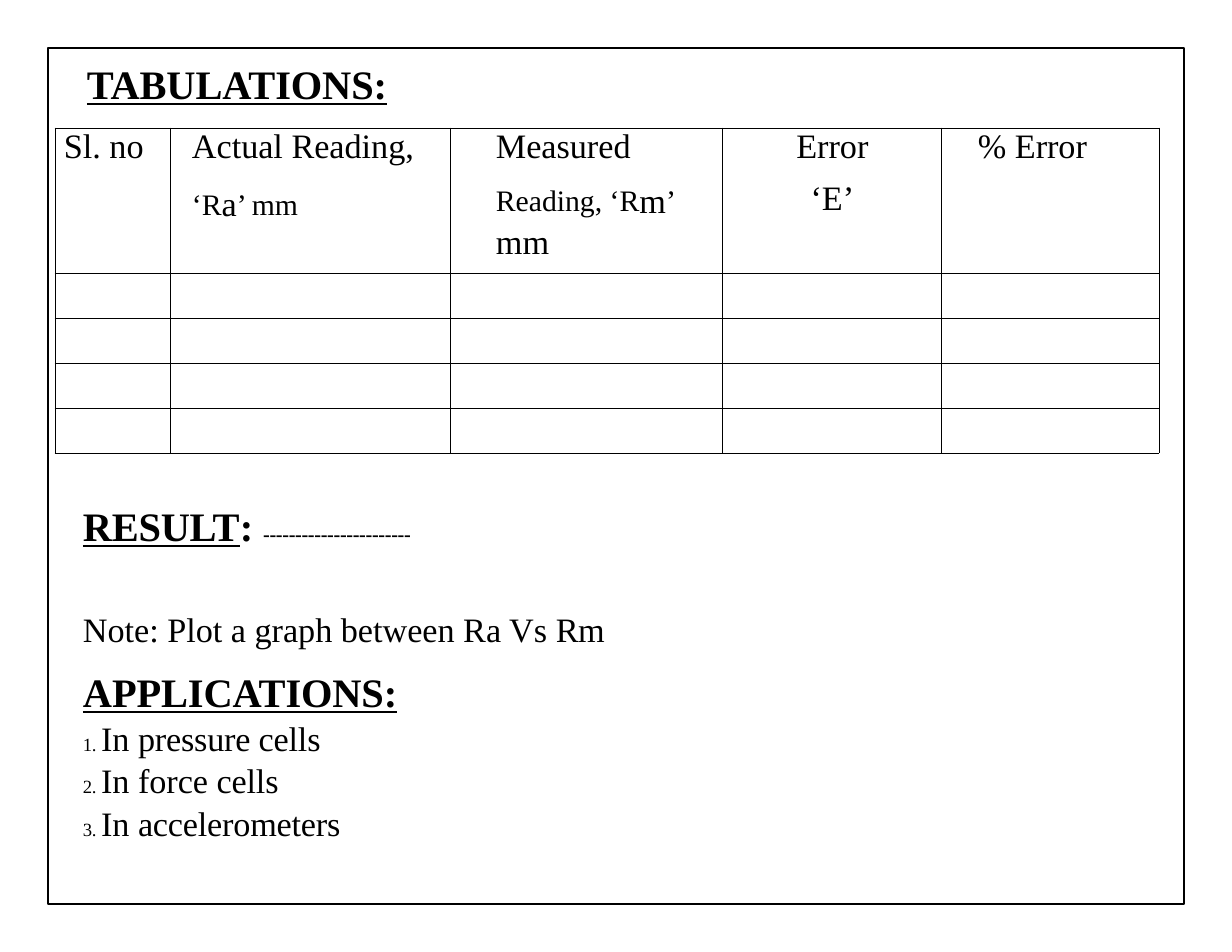
from pptx import Presentation
from pptx.dml.color import RGBColor
from pptx.enum.shapes import MSO_SHAPE as Shape
from pptx.enum.text import PP_ALIGN as Align
from pptx.oxml import parse_xml
from pptx.oxml.ns import nsdecls
from pptx.util import Emu, Pt

SCALE = 914400 / 112
BLACK = "000000"


def px(length):
    return Emu(round(length * SCALE))


def color(code):
    return RGBColor.from_string(code)


def run(text, size=22, **style):
    return text, size, style


def line(*runs, indent=1, before=0, align=Align.LEFT):
    return runs, indent, before, align


class SlideBuilder:
    """Draws the elements of one slide in a shared style."""

    def __init__(self, slide, font="Times New Roman", ink=BLACK):
        self.slide, self.font, self.ink = slide, font, ink

    def frame(self, left, top, width, height):
        shape = self.slide.shapes.add_shape(
            Shape.RECTANGLE, px(left), px(top), px(width), px(height))
        shape.shadow.inherit = False
        shape.fill.background()
        shape.line.color.rgb = color(self.ink)
        shape.line.width = Pt(0.75)

    def add_run(self, paragraph, text, size, bold=False, underline=False, baseline=0, spacing=0):
        part = paragraph.add_run()
        part.text = text
        font = part.font
        font.name, font.size = self.font, Pt(size)
        font.bold, font.underline = bold, underline
        font.color.rgb = color(self.ink)
        properties = part._r.get_or_add_rPr()
        if baseline:
            properties.set("baseline", str(baseline))
        if spacing:
            properties.set("spc", str(spacing))

    def add_lines(self, frame, lines):
        frame.word_wrap = True
        for index, (runs, indent, before, align) in enumerate(lines):
            paragraph = frame.add_paragraph() if index else frame.paragraphs[0]
            paragraph.alignment = align
            paragraph.space_before = Pt(before)
            properties = paragraph._p.get_or_add_pPr()
            properties.set("marL", str(px(indent)))
            properties.set("indent", "0")
            for text, size, style in runs:
                self.add_run(paragraph, text, size, **style)

    def text(self, left, top, width, height, lines):
        box = self.slide.shapes.add_textbox(px(left), px(top), px(width), px(height))
        frame = box.text_frame
        frame.margin_left = frame.margin_right = frame.margin_bottom = 0
        frame.margin_top = px(1)
        self.add_lines(frame, lines)

    def border(self, cell):
        properties = cell._tc.get_or_add_tcPr()
        for side in ("lnL", "lnR", "lnT", "lnB"):
            properties.append(parse_xml(
                f'<a:{side} {nsdecls("a")} w="6350"><a:solidFill>'
                f'<a:srgbClr val="{self.ink}"/></a:solidFill></a:{side}>'))

    def table(self, left, top, widths, heights, headings):
        table = self.slide.shapes.add_table(
            len(heights), len(widths), px(left), px(top),
            px(sum(widths)), px(sum(heights))).table
        table.first_row = table.horz_banding = False
        for column, width in zip(table.columns, widths):
            column.width = px(width)
        for row, height in zip(table.rows, heights):
            row.height = px(height)
        for cell in table.iter_cells():
            cell.margin_left = cell.margin_right = cell.margin_top = cell.margin_bottom = 0
            self.border(cell)
            cell.fill.background()
        for column, lines in enumerate(headings):
            self.add_lines(table.cell(0, column).text_frame, lines)


def main():
    presentation = Presentation()
    presentation.slide_width, presentation.slide_height = px(1232), px(952)
    slide = presentation.slides.add_slide(presentation.slide_layouts[6])
    builder = SlideBuilder(slide)
    heading = {"size": 26, "bold": True, "underline": True}
    raised = {"size": 33, "baseline": 3000}

    builder.text(82, 58, 309, 52, [
        line(run("TABULATIONS:", spacing=-10, **heading), before=1, align=Align.CENTER)])

    builder.table(55, 128, [115, 280, 272, 219, 218], [137] + [45] * 4, [
        [line(run("Sl. no"), indent=9)],
        [line(run("Actual Reading,"), indent=22),
         line(run("‘R", **raised), run("a"), run("’ mm", **raised), indent=22, before=3.4)],
        [line(run("Measured"), indent=46),
         line(run("Reading, ‘R", **raised), run("m"), run("’ ", **raised), run("mm"),
              indent=46, before=0.9)],
        [line(run("Error"), indent=2, align=Align.CENTER),
         line(run("‘E’"), indent=2, before=9.1, align=Align.CENTER)],
        [line(run("% Error"), indent=37)],
    ])

    applications = [("In ", "pressure cells"), ("In force ", "cells"), ("In ", "accelerometers")]
    builder.text(82, 500, 524, 346, [
        line(run("RESULT", spacing=-20, **heading),
             run(": ", 26, bold=True, spacing=-20),
             run("-" * 23, 13, bold=True, spacing=-20), before=1.1),
        line(run("Note: Plot a graph between Ra Vs "), run("Rm", spacing=-20), before=38),
        line(run("APPLICATIONS:", spacing=-10, **heading), before=11.2),
        *[line(run(f"{number}. ", 12, spacing=-20), run(start), run(end, spacing=-10), before=1)
          for number, (start, end) in enumerate(applications, 1)],
    ])

    builder.frame(48, 48, 1136, 856)
    presentation.save("out.pptx")


if __name__ == "__main__":
    main()
